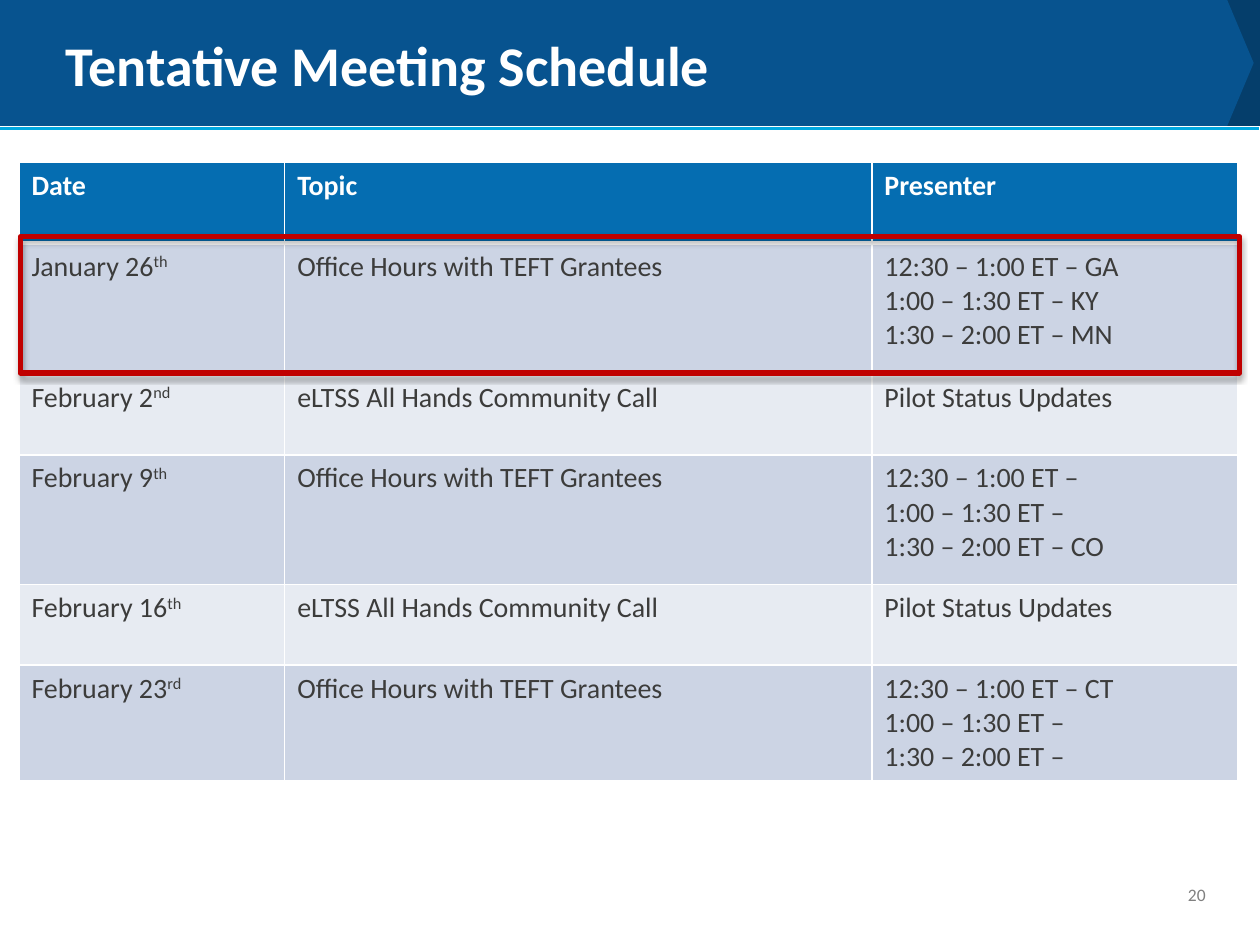
import pptx
import pptx.util
import pptx.dml.color
import pptx.enum.shapes
import pptx.enum.text
import pptx.oxml
import pptx.oxml.ns
from lxml import etree

Pt = pptx.util.Pt
Kind = pptx.enum.shapes.MSO_SHAPE
Align = pptx.enum.text.PP_ALIGN
Anchor = pptx.enum.text.MSO_ANCHOR
qn = pptx.oxml.ns.qn

COLORS = {
    "navy": "053E6B", "blue": "07538F", "sky": "00A8E1", "head": "056DB1",
    "dark": "CCD4E4", "light": "E7EBF2", "text": "3C3C3B", "gray": "808080",
    "red": "C00000", "white": "FFFFFF", "black": "000000",
}
TIMES = ("12:30 – 1:00 ET –", "1:00 – 1:30 ET –", "1:30 – 2:00 ET –")


def hours(*states):
    """One line per office-hour slot, with its state if there is one."""
    return "\n".join(f"{time} {state}".strip() for time, state in zip(TIMES, states))


OFFICE = "Office Hours with TEFT Grantees"
CALL = "eLTSS All Hands Community Call"
STATUS = "Pilot Status Updates"
HEADS = ("Date", "Topic", "Presenter")
ROWS = [
    (("January 26", "th"), OFFICE, hours("GA", "KY", "MN")),
    (("February 2", "nd"), CALL, STATUS),
    (("February 9", "th"), OFFICE, hours("", "", "CO")),
    (("February 16", "th"), CALL, STATUS),
    (("February 23", "rd"), OFFICE, hours("CT", "", "")),
]


class Deck:
    """Style and current slide; lengths are cells of a 100 by 75 grid."""
    font = "Calibri"
    unit = pptx.util.Inches(0.1)

    def __init__(self):
        self.prs = pptx.Presentation()
        self.prs.slide_width, self.prs.slide_height = self.span(100, 75)
        self.slide = self.prs.slides.add_slide(self.prs.slide_layouts[5])
        self.shapes = self.slide.shapes

    def span(self, *cells):
        return [round(cell * self.unit) for cell in cells]

    def color(self, name):
        return pptx.dml.color.RGBColor.from_string(COLORS[name])

    def style(self, frame, size, color, bold=False):
        for para in frame.paragraphs:
            para.alignment = Align.LEFT
            for run in para.runs:
                run.font.name, run.font.size, run.font.bold = self.font, Pt(size), bold
                run.font.color.rgb = self.color(color)

    def plate(self, box, color, point):
        shape = self.shapes.add_shape(Kind.PENTAGON, *self.span(*box))
        shape.adjustments[0] = point
        shape.shadow.inherit = False
        shape.fill.solid()
        shape.fill.fore_color.rgb = self.color(color)
        shape.line.fill.background()

    def rule(self, ends, color, width):
        line = self.shapes.add_connector(
            pptx.enum.shapes.MSO_CONNECTOR.STRAIGHT, *self.span(*ends))
        line.line.color.rgb = self.color(color)
        line.line.width = Pt(width)
        etree.SubElement(line._element.spPr, qn("a:effectLst"))

    def title(self, box, text):
        shape = self.shapes.title
        self.shapes._spTree.append(shape._element)  # in front of the banner
        shape.left, shape.top, shape.width, shape.height = self.span(*box)
        shape.text_frame.text = text
        shape.text_frame.vertical_anchor = Anchor.MIDDLE
        self.style(shape.text_frame, 32, "white", True)

    def label(self, box, text, size, color):
        frame = self.shapes.add_textbox(*self.span(*box)).text_frame
        frame.word_wrap = True
        frame.text = text
        self.style(frame, size, color)

    def edge(self, cell, side, width):
        line = etree.SubElement(cell._tc.get_or_add_tcPr(), qn("a:ln" + side),
                                w=str(Pt(width)))
        fill = etree.SubElement(line, qn("a:solidFill"))
        etree.SubElement(fill, qn("a:srgbClr"), val=COLORS["white"])

    def cell(self, cell, text, fill, color, bold, rims):
        for side, width in rims.items():
            self.edge(cell, side, width)
        cell.fill.solid()
        cell.fill.fore_color.rgb = self.color(fill)
        frame = cell.text_frame
        if isinstance(text, tuple):  # day with a raised ending
            for part in text:
                run = frame.paragraphs[0].add_run()
                run.text = part
            run.font._element.set("baseline", "30000")
        else:
            frame.text = text
        self.style(frame, 16, color, bold)

    def table(self, left, top, cols, rows, data):
        box = self.span(left, top, sum(cols), sum(rows))
        grid = self.shapes.add_table(len(rows), len(cols), *box).table
        for col, width in zip(grid.columns, self.span(*cols)):
            col.width = width
        for row, height in zip(grid.rows, self.span(*rows)):
            row.height = height
        for i, texts in enumerate(data):
            head = i == 0
            fill = "head" if head else ("light", "dark")[i % 2]
            rims = {"L": 1, "R": 1, "T": 3 if i == 1 else 1, "B": 3 if head else 1}
            for j, text in enumerate(texts):
                self.cell(grid.cell(i, j), text, fill,
                          "white" if head else "text", head, rims)

    def frame(self, box, color, width):
        shape = self.shapes.add_shape(Kind.RECTANGLE, *self.span(*box))
        shape.fill.background()
        shape.line.color.rgb = self.color(color)
        shape.line.width = Pt(width)
        shape.shadow.inherit = False
        effects = shape._element.spPr.find(qn("a:effectLst"))
        shade = etree.SubElement(effects, qn("a:outerShdw"), blurRad=str(Pt(3.1)),
                                 dist=str(Pt(1.8)), dir="5400000", rotWithShape="0")
        tint = etree.SubElement(shade, qn("a:srgbClr"), val=COLORS["black"])
        etree.SubElement(tint, qn("a:alpha"), val="35000")


def main():
    deck = Deck()
    # Banner
    deck.plate((95.5, 0, 4.5, 10), "navy", 0)
    deck.plate((0, 0, 99.5, 10), "blue", 0.21)
    deck.rule((0, 10.2, 99.9, 10.2), "sky", 2.25)
    # Page number and title
    deck.label((93.3, 69.7, 5.2, 2.7), "20", 10, "gray")
    deck.title((4.2, 0.8, 91.7, 8.5), "Tentative Meeting Schedule")
    # Schedule, with the next meeting framed
    deck.table(1.5, 12.9, (21.1, 46.6, 29), (6.4, 10.4, 6.4, 10.3, 6.4, 9.1),
               [HEADS] + ROWS)
    deck.frame((1.6, 18.8, 96.8, 10.8), "red", 3)
    deck.prs.save("out.pptx")


if __name__ == "__main__":
    main()
